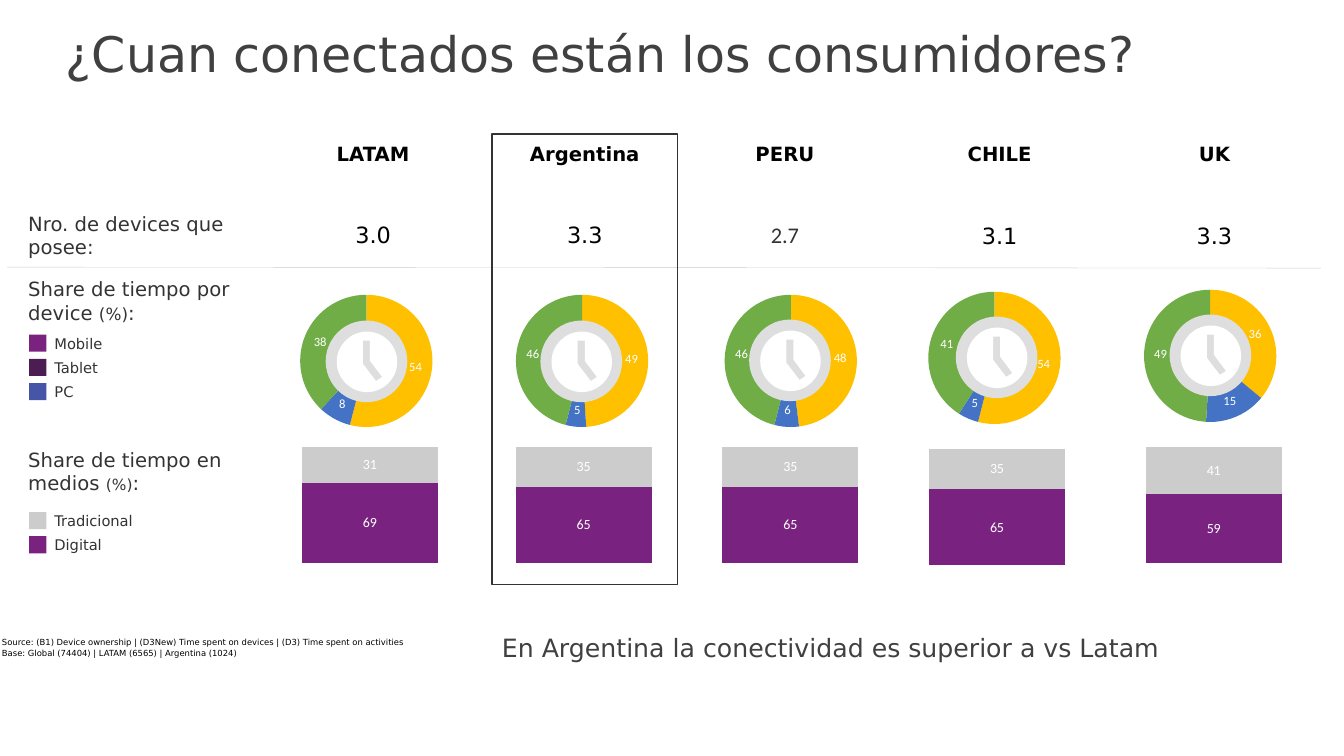
from lxml import etree
from pptx import Presentation
from pptx.chart.data import CategoryChartData
from pptx.dml.color import RGBColor
from pptx.enum.chart import XL_CHART_TYPE
from pptx.enum.shapes import MSO_CONNECTOR, MSO_SHAPE
from pptx.enum.text import MSO_ANCHOR, PP_ALIGN
from pptx.oxml.ns import qn
from pptx.util import Inches, Pt

RECT, OVAL = MSO_SHAPE.RECTANGLE, MSO_SHAPE.OVAL
STRAIGHT = MSO_CONNECTOR.STRAIGHT
DONUT, STACK = XL_CHART_TYPE.DOUGHNUT, XL_CHART_TYPE.COLUMN_STACKED_100
TOP, MIDDLE, BOTTOM = MSO_ANCHOR.TOP, MSO_ANCHOR.MIDDLE, MSO_ANCHOR.BOTTOM
LEFT, CENTER = PP_ALIGN.LEFT, PP_ALIGN.CENTER

BLACK = RGBColor(0x00, 0x00, 0x00)
WHITE = RGBColor(0xFF, 0xFF, 0xFF)
DARK = RGBColor(0x33, 0x33, 0x33)
SLATE = RGBColor(0x40, 0x40, 0x40)
SILVER = RGBColor(0xCC, 0xCC, 0xCC)
PALE = RGBColor(0xDE, 0xDE, 0xDE)
PURPLE = RGBColor(0x7A, 0x22, 0x80)
PLUM = RGBColor(0x4C, 0x1D, 0x52)
INDIGO = RGBColor(0x46, 0x55, 0xA5)
GOLD = RGBColor(0xFF, 0xC0, 0x00)
BLUE = RGBColor(0x44, 0x72, 0xC4)
GREEN = RGBColor(0x70, 0xAD, 0x47)

SANS, BODY = "DejaVu Sans", "Calibri"
PLAIN = "{2D5ABB26-0587-4C30-8999-92F81FD0307C}"
FACE = [(0.3, 0), (0, 0.3), (0.3, 0.6), (0.6, 0.3), (0.3, 0)]
HAND = [(0.39, 0.49), (0.26, 0.32), (0.26, 0.09), (0.33, 0.09), (0.33, 0.29), (0.45, 0.45)]


class Board:
    """Draw styled elements on the current slide."""

    def __init__(self, slide):
        self.shapes = slide.shapes

    def style(self, font, size, color=DARK, name=SANS, bold=False):
        for key, value in {"size": Pt(size), "name": name, "bold": bold}.items():
            setattr(font, key, value)
        font.color.rgb = color

    def text(self, box, runs, color=DARK, pad=0, wrap=True, align=LEFT, anchor=TOP, space=None):
        frame = self.shapes.add_textbox(*map(Inches, box)).text_frame
        form = {"word_wrap": wrap, "vertical_anchor": anchor}
        form |= {f"margin_{side}": Inches(pad) for side in ("left", "right")}
        form |= {f"margin_{side}": Inches(pad / 2) for side in ("top", "bottom")}
        for key, value in form.items():
            setattr(frame, key, value)
        para = frame.paragraphs[0]
        para.alignment, para.line_spacing = align, space
        for words, size in runs:
            run = para.add_run()
            run.text = words
            self.style(run.font, size, color)

    def shape(self, kind, box, fill=None, line=None):
        shape = self.shapes.add_shape(kind, *map(Inches, box))
        self.paint(shape, fill, line)

    def paint(self, shape, fill, line=None):
        shape.shadow.inherit = False
        if fill is None:
            shape.fill.background()
        else:
            shape.fill.solid()
            shape.fill.fore_color.rgb = fill
        if line is None:
            shape.line.fill.background()
        else:
            shape.line.color.rgb = line
            shape.line.width = Pt(1)

    def rule(self, *ends):
        line = self.shapes.add_connector(STRAIGHT, *map(Inches, ends))
        line.line.color.rgb = SILVER
        line.line.width = Pt(0.25)
        etree.SubElement(line._element.spPr, qn("a:effectLst"))

    def table(self, left, top, width, height, rows, pad):
        frame = self.shapes.add_table(
            len(rows), len(rows[0]), Inches(left), Inches(top),
            Inches(width * len(rows[0])), Inches(height * len(rows)))
        table = frame.table
        table.first_row = table.horz_banding = False
        table._tbl.tblPr[0].text = PLAIN
        for r, row in enumerate(rows):
            for c, (words, look, align, anchor) in enumerate(row):
                cell = table.cell(r, c)
                form = {"margin_left": Inches(0.02), "margin_right": Inches(0.02),
                        "margin_top": Inches(pad), "margin_bottom": Inches(pad),
                        "vertical_anchor": anchor}
                for key, value in form.items():
                    setattr(cell, key, value)
                cell.fill.background()
                para = cell.text_frame.paragraphs[0]
                para.alignment = align
                run = para.add_run()
                run.text = words
                self.style(run.font, **look)

    def chart(self, kind, box, cats, rows, size, area):
        data = CategoryChartData(number_format="#,##0")
        data.categories = cats
        for i, row in enumerate(rows, 1):
            data.add_series(f"Series {i}", row)
        chart = self.shapes.add_chart(kind, *map(Inches, box), data).chart
        chart.has_legend = chart.has_title = False
        self.style(chart.font, size, BLACK, BODY)
        plot = chart._chartSpace.chart.plotArea
        for old in plot.findall(qn("c:layout")):
            plot.remove(old)
        layout = etree.Element(qn("c:layout"))
        manual = etree.SubElement(layout, qn("c:manualLayout"))
        parts = {"layoutTarget": "inner", "xMode": "edge", "yMode": "edge"} | dict(zip("xywh", area))
        for key, value in parts.items():
            etree.SubElement(manual, qn(f"c:{key}")).set("val", str(value))
        plot.insert(0, layout)
        return chart

    def label(self, series, size):
        tags = series.data_labels
        form = {"show_value": True, "number_format": "#,##0", "number_format_is_linked": False}
        for key, value in form.items():
            setattr(tags, key, value)
        self.style(tags.font, size, WHITE, BODY)

    def donut(self, left, top, shares):
        chart = self.chart(DONUT, (left, top, 1.67, 1.4), ["1", "2", "3"], [shares],
                           10, (0.082, 0.014, 0.786, 0.999))
        plot = chart.plots[0]
        plot.vary_by_categories = True
        plot._element.find(qn("c:holeSize")).set("val", "60")
        series = plot.series[0]
        for i, color in enumerate((GOLD, BLUE, GREEN)):
            fill = series.points[i].format.fill
            fill.solid()
            fill.fore_color.rgb = color
        self.label(series, 9)

    def clock(self, left, top):
        self.shape(OVAL, (left, top, 0.81, 0.81), PALE)
        face, hand = ([(Inches(left + 0.11 + x), Inches(top + 0.11 + y)) for x, y in part]
                      for part in (FACE, HAND))
        path = self.shapes.build_freeform(*face[0])
        path.add_line_segments(face[1:], close=True)
        path.move_to(*hand[0])
        path.add_line_segments(hand[1:], close=True)
        shape = path.convert_to_shape()
        self.paint(shape, WHITE)
        self.bend(shape)

    def bend(self, shape):
        steps = list(next(shape._element.iter(qn("a:path"))))[:5]
        spots = [(int(step[0].get("x")), int(step[0].get("y"))) for step in steps]
        for i, step in enumerate(steps[1:]):
            (x, y), (u, v) = spots[i:i + 2]
            if i % 2:
                turns = [(x, y + 0.55 * (v - y)), (u - 0.55 * (u - x), v)]
            else:
                turns = [(x + 0.55 * (u - x), y), (u, v - 0.55 * (v - y))]
            curve = etree.Element(qn("a:cubicBezTo"))
            for a, b in turns + [(u, v)]:
                etree.SubElement(curve, qn("a:pt"), x=str(round(a)), y=str(round(b)))
            step.getparent().replace(step, curve)

    def stack(self, left, top, digital):
        chart = self.chart(STACK, (left, top, 2.45, 1.9), ["1"], [[digital], [100 - digital]],
                           18, (0.175, 0.058, 0.661, 0.609))
        for axis in (chart.value_axis, chart.category_axis):
            axis.visible = axis.has_major_gridlines = False
        plot = chart.plots[0]
        for key, value in {"gap_width": 20, "overlap": 100, "vary_by_categories": False}.items():
            setattr(plot, key, value)
        for series, color in zip(plot.series, (PURPLE, SILVER)):
            series.format.fill.solid()
            series.format.fill.fore_color.rgb = color
            self.label(series, 10)

    def legend(self, top, items):
        for i, (name, color) in enumerate(items):
            y = top + 0.24 * i
            self.shape(RECT, (0.29, y, 0.17, 0.17), color)
            self.text((0.54, y, 1.41, 0.17), [(name, 10.5)])


def main():
    deck = Presentation()
    deck.slide_width, deck.slide_height = Inches(13.33), Inches(7.5)
    board = Board(deck.slides.add_slide(deck.slide_layouts[6]))

    board.text((0.31, 0.24, 11.3, 0.64), [("¿Cuan conectados están los consumidores?", 35)],
               SLATE, pad=0.1, align=CENTER, anchor=MIDDLE, space=0.9)
    board.text((0.28, 2.1, 2.54, 0.18), [("Nro. de devices que posee:", 14)])
    for y, words, size in ((2.75, "Share de tiempo por device ", 12),
                           (4.44, "Share de tiempo en medios ", 11)):
        board.text((0.28, y, 2.54, 0.18), [(words, 14), ("(%)", size), (":", 14)])
    board.rule(13.1, 2.66, 0.07, 2.65)
    board.legend(3.32, [("Mobile", PURPLE), ("Tablet", PLUM), ("PC", INDIGO)])
    board.legend(5.08, [("Tradicional", SILVER), ("Digital", PURPLE)])

    head = {"size": 14, "color": BLACK, "bold": True}
    count = {"size": 16, "color": BLACK}
    soft = {"size": 16, "name": BODY}
    for left, top, width, lands in (
            (2.65, 1.2, 2.1, [("LATAM", "3.0", count), ("Argentina", "3.3", count)]),
            (6.72, 1.21, 2.13, [("PERU", "2.7", soft), ("CHILE", "3.1", count),
                                ("UK", "3.3", count)])):
        rows = [[(land, head, CENTER, MIDDLE) for land, _, _ in lands],
                [(num, look, CENTER, BOTTOM) for _, num, look in lands]]
        board.table(left, top, width, 0.66, rows, 0.05)

    note = {"size": 6, "color": BLACK}
    lines = ("Source: (B1) Device ownership | (D3New) Time spent on devices | (D3) Time spent on activities",
             "Base: Global (74404) | LATAM (6565) | Argentina (1024)")
    board.table(0, 6.33, 8.32, 0.1, [[(line, note, LEFT, MIDDLE)] for line in lines], 0)

    for ring, dial, bar, shares, digital in (
            ((2.84, 2.88), (3.23, 3.18), (2.43, 4.32), (54, 8, 38), 69),
            ((4.98, 2.88), (5.36, 3.18), (4.55, 4.32), (49, 5, 46), 65),
            ((7.05, 2.88), (7.43, 3.17), (6.6, 4.32), (48, 6, 46), 65),
            ((9.07, 2.85), (9.48, 3.14), (8.65, 4.34), (54, 5, 41), 65),
            ((11.21, 2.83), (11.6, 3.12), (10.8, 4.32), (36, 15, 49), 59)):
        board.donut(*ring, shares)
        board.clock(*dial)
        board.stack(*bar, digital)

    board.shape(RECT, (4.88, 1.33, 1.84, 4.47), line=DARK)
    board.text((4.88, 6.22, 6.8, 0.4), [("En Argentina la conectividad es superior a vs Latam", 18)],
               SLATE, pad=0.1, wrap=False)
    deck.save("out.pptx")


if __name__ == "__main__":
    main()
